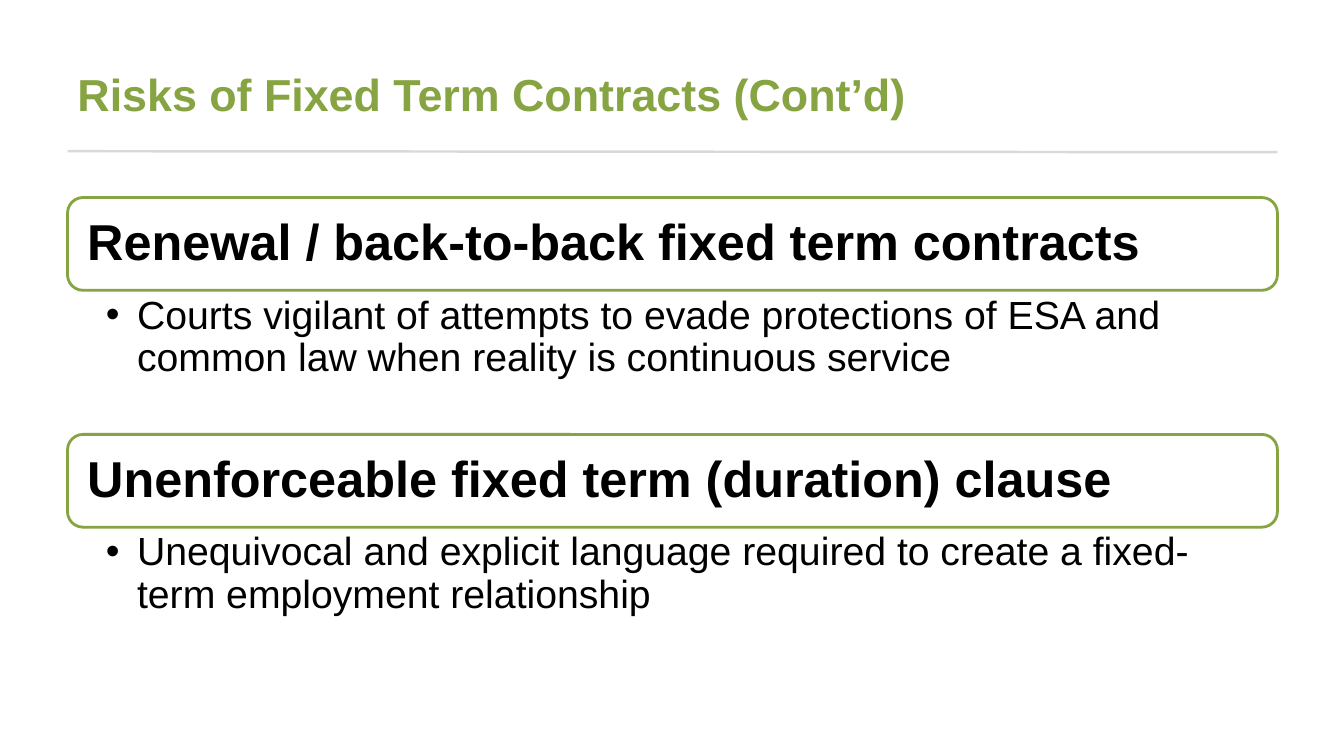
from dataclasses import dataclass

from lxml.etree import SubElement
from pptx import Presentation
from pptx.dml.color import RGBColor
from pptx.enum.shapes import MSO_CONNECTOR, MSO_SHAPE
from pptx.enum.text import MSO_ANCHOR, PP_ALIGN
from pptx.oxml.ns import qn
from pptx.slide import Slide
from pptx.text.text import TextFrame
from pptx.util import Inches, Pt

GREEN = RGBColor(0x87, 0xA4, 0x43)
GREY = RGBColor(0xD9, 0xD9, 0xD9)
BLACK = RGBColor(0, 0, 0)
WHITE = RGBColor(0xFF, 0xFF, 0xFF)

SLIDE_W, SLIDE_H = Inches(13.33), Inches(7.5)
LEFT, WIDTH = Inches(0.67), Inches(12)
TITLE_TOP, TITLE_H = Inches(0.3), Inches(1.25)
RULE_Y = Inches(1.5)
FIRST_ROW = Inches(1.96)
HEADING_H, DETAIL_H = Inches(0.92), Inches(1.43)
BULLET_INDENT = Inches(0.31)


@dataclass(frozen=True)
class Risk:
    heading: str
    detail: str


RISKS = (
    Risk("Renewal / back-to-back fixed term contracts",
         "Courts vigilant of attempts to evade protections of ESA and "
         "common law when reality is continuous service"),
    Risk("Unenforceable fixed term (duration) clause",
         "Unequivocal and explicit language required to create a "
         "fixed-term employment relationship"),
)


def write(tf: TextFrame, text: str, size: int, color: RGBColor, bold: bool,
          anchor: MSO_ANCHOR, insets: tuple[float, float, float, float],
          spacing: float = 1.0) -> None:
    """Fill a frame with one paragraph; insets are left, top, right, bottom."""
    tf.word_wrap = True
    tf.vertical_anchor = anchor
    (tf.margin_left, tf.margin_top,
     tf.margin_right, tf.margin_bottom) = map(Inches, insets)
    tf.text = text
    p = tf.paragraphs[0]
    p.alignment = PP_ALIGN.LEFT
    p.line_spacing = spacing
    font = p.runs[0].font
    font.name, font.size, font.bold = "Arial", Pt(size), bold
    font.color.rgb = color


def add_bullet(tf: TextFrame) -> None:
    p = tf.paragraphs[0]
    p.level = 1
    pPr = p._p.get_or_add_pPr()
    pPr.set("marL", str(BULLET_INDENT))
    pPr.set("indent", str(-BULLET_INDENT))
    SubElement(pPr, qn("a:buFont")).set("typeface", "Arial")
    SubElement(pPr, qn("a:buChar")).set("char", "•")


def draw_title(s: Slide, text: str) -> None:
    title = s.shapes.add_textbox(LEFT, TITLE_TOP, WIDTH, TITLE_H)
    write(title.text_frame, text, 32, GREEN, True, MSO_ANCHOR.MIDDLE,
          (0.1, 0.05, 0.1, 0.05))


def draw_rule(s: Slide) -> None:
    rule = s.shapes.add_connector(MSO_CONNECTOR.STRAIGHT, LEFT, RULE_Y,
                                  LEFT + WIDTH, RULE_Y + Inches(0.01))
    rule.line.color.rgb = GREY
    rule.line.width = Pt(1.75)
    SubElement(rule._element.spPr, qn("a:effectLst"))


def draw_risk(s: Slide, risk: Risk, row: int) -> None:
    top = FIRST_ROW + row * (HEADING_H + DETAIL_H)
    box = s.shapes.add_shape(MSO_SHAPE.ROUNDED_RECTANGLE, LEFT, top, WIDTH, HEADING_H)
    box.shadow.inherit = False
    box.fill.solid()
    box.fill.fore_color.rgb = WHITE
    box.line.color.rgb = GREEN
    box.line.width = Pt(2)
    write(box.text_frame, risk.heading, 36, BLACK, True, MSO_ANCHOR.MIDDLE,
          (0.15, 0.15, 0.15, 0.15), 0.9)

    detail = s.shapes.add_textbox(LEFT, top + HEADING_H, WIDTH, DETAIL_H)
    write(detail.text_frame, risk.detail, 28, BLACK, False, MSO_ANCHOR.TOP,
          (0.38, 0.05, 0.28, 0.05), 0.9)
    add_bullet(detail.text_frame)


def main() -> None:
    prs = Presentation()
    prs.slide_width, prs.slide_height = SLIDE_W, SLIDE_H
    s = prs.slides.add_slide(prs.slide_layouts[6])
    draw_rule(s)
    draw_title(s, "Risks of Fixed Term Contracts (Cont’d)")
    for row, risk in enumerate(RISKS):
        draw_risk(s, risk, row)
    prs.save("out.pptx")


if __name__ == "__main__":
    main()
